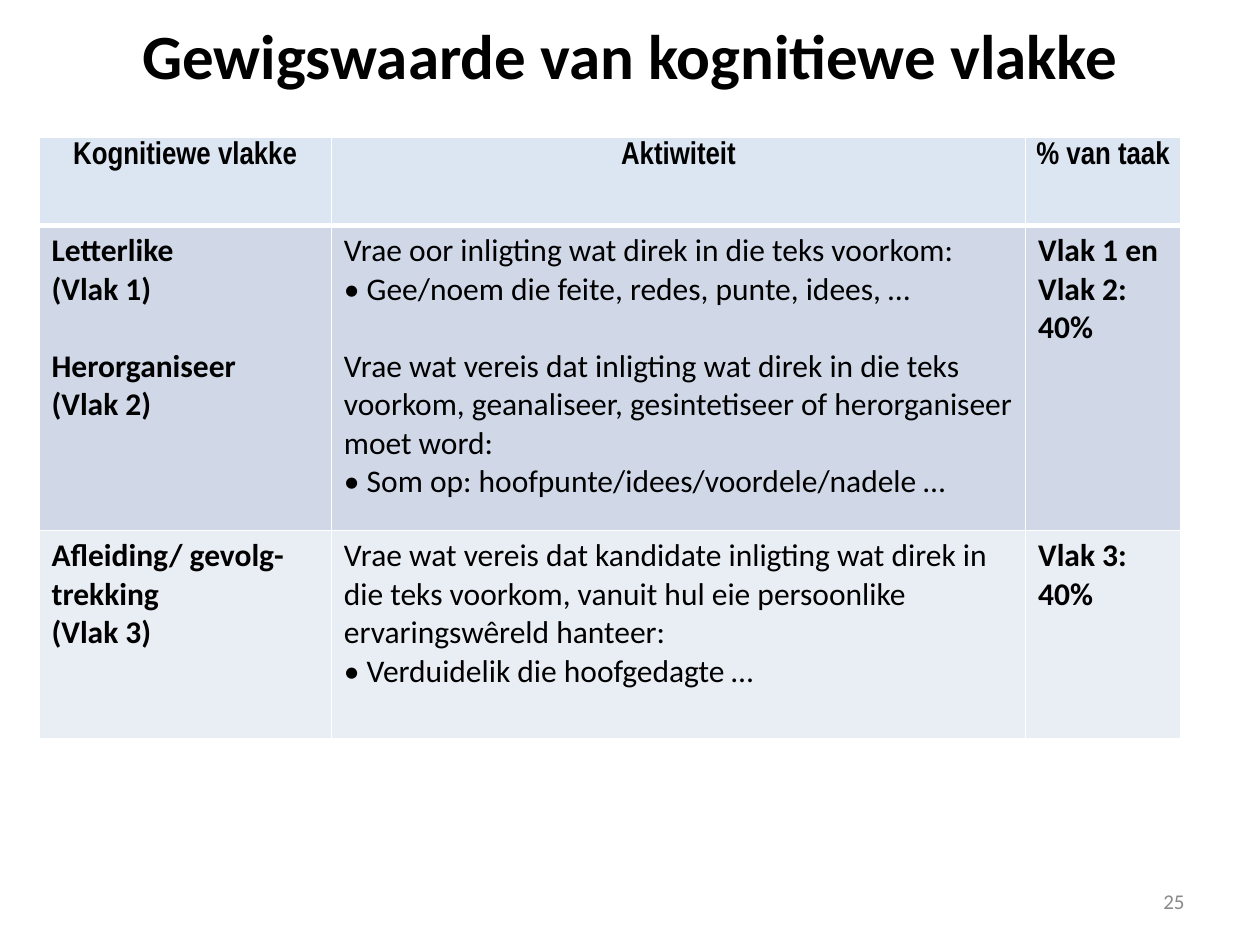
from dataclasses import dataclass

from lxml.etree import SubElement
from pptx import Presentation
from pptx.dml.color import RGBColor
from pptx.enum.text import MSO_ANCHOR, PP_ALIGN
from pptx.oxml.ns import qn
from pptx.util import Inches, Pt

BLACK, WHITE, GREY = "000000", "FFFFFF", "898989"
COLUMN_WIDTHS = (2.32, 5.51, 1.23)
BLOCK_GAP = 22


@dataclass
class Style:
    size: float
    color: str = BLACK
    bold: bool = False
    font: str = "Calibri"
    align: PP_ALIGN = PP_ALIGN.LEFT
    line_spacing: float = 1.0


@dataclass
class Row:
    height: float
    fill: str
    top_line: float
    bottom_line: float
    cells: tuple


HEADING = Style(18, bold=True, font="Arial Narrow", align=PP_ALIGN.CENTER, line_spacing=1.15)
LABEL = Style(18, bold=True)
BODY = Style(18)

ROWS = (
    Row(0.7, "DCE6F2", 1, 3, (
        [["Kognitiewe vlakke"]],
        [["Aktiwiteit"]],
        [["% van taak"]],
    )),
    Row(2.42, "D0D8E8", 3, 1, (
        [["Letterlike", "(Vlak 1)"], ["Herorganiseer", "(Vlak 2)"]],
        [
            ["Vrae oor inligting wat direk in die teks voorkom:",
             "• Gee/noem die feite, redes, punte, idees, …"],
            ["Vrae wat vereis dat inligting wat direk in die teks voorkom, "
             "geanaliseer, gesintetiseer of herorganiseer moet word:",
             "• Som op: hoofpunte/idees/voordele/nadele …"],
        ],
        [["Vlak 1 en Vlak 2:", "40%"]],
    )),
    Row(1.65, "E9EDF4", 1, 1, (
        [["Afleiding/ gevolg-trekking", "(Vlak 3)"]],
        [["Vrae wat vereis dat kandidate inligting wat direk in die teks voorkom, "
          "vanuit hul eie persoonlike ervaringswêreld hanteer:",
          "• Verduidelik die hoofgedagte …"]],
        [["Vlak 3: 40%"]],
    )),
)


def rgb(color: str) -> RGBColor:
    return RGBColor.from_string(color)


def write_blocks(tf, blocks: list, style: Style) -> None:
    tf.word_wrap = True
    tf.text = "\n".join(line for block in blocks for line in block)
    paragraphs = iter(tf.paragraphs)
    for b, block in enumerate(blocks):
        for i in range(len(block)):
            p = next(paragraphs)
            p.alignment = style.align
            p.line_spacing = style.line_spacing
            p.space_before = Pt(BLOCK_GAP if b and i == 0 else 0)
            p.font.name = style.font
            p.font.size = Pt(style.size)
            p.font.bold = style.bold
            p.font.color.rgb = rgb(style.color)


def add_text(s, left: float, top: float, width: float, height: float,
             text: str, style: Style) -> None:
    tf = s.shapes.add_textbox(Inches(left), Inches(top), Inches(width), Inches(height)).text_frame
    tf.vertical_anchor = MSO_ANCHOR.MIDDLE
    write_blocks(tf, [[text]], style)


def set_borders(cell, top: float, bottom: float) -> None:
    tc_pr = cell._tc.get_or_add_tcPr()
    for side, width in (("L", 1), ("R", 1), ("T", top), ("B", bottom)):
        line = SubElement(tc_pr, qn(f"a:ln{side}"), w=str(Pt(width)))
        SubElement(SubElement(line, qn("a:solidFill")), qn("a:srgbClr"), val=WHITE)


def add_levels_table(s, left: float, top: float) -> None:
    table = s.shapes.add_table(
        len(ROWS), len(COLUMN_WIDTHS), Inches(left), Inches(top),
        Inches(sum(COLUMN_WIDTHS)), Inches(sum(row.height for row in ROWS)),
    ).table
    table.horz_banding = False
    for column, width in zip(table.columns, COLUMN_WIDTHS):
        column.width = Inches(width)
    for r, row in enumerate(ROWS):
        table.rows[r].height = Inches(row.height)
        for c, blocks in enumerate(row.cells):
            cell = table.cell(r, c)
            set_borders(cell, row.top_line, row.bottom_line)
            cell.fill.solid()
            cell.fill.fore_color.rgb = rgb(row.fill)
            if r == 0:
                cell.margin_left = cell.margin_right = Inches(0.07)
                cell.margin_top = cell.margin_bottom = 0
                style = HEADING
            else:
                style = BODY if c == 1 else LABEL
            write_blocks(cell.text_frame, blocks, style)


def main() -> None:
    prs = Presentation()
    prs.slide_width, prs.slide_height = Inches(10), Inches(7.5)
    s = prs.slides.add_slide(prs.slide_layouts[6])
    add_text(s, 0.75, 0, 8.5, 0.86, "Gewigswaarde van kognitiewe vlakke",
             Style(36, bold=True, align=PP_ALIGN.CENTER))
    add_levels_table(s, 0.31, 1.09)
    add_text(s, 7.17, 6.95, 2.33, 0.4, "25", Style(12, GREY, align=PP_ALIGN.RIGHT))
    prs.save("out.pptx")


if __name__ == "__main__":
    main()
